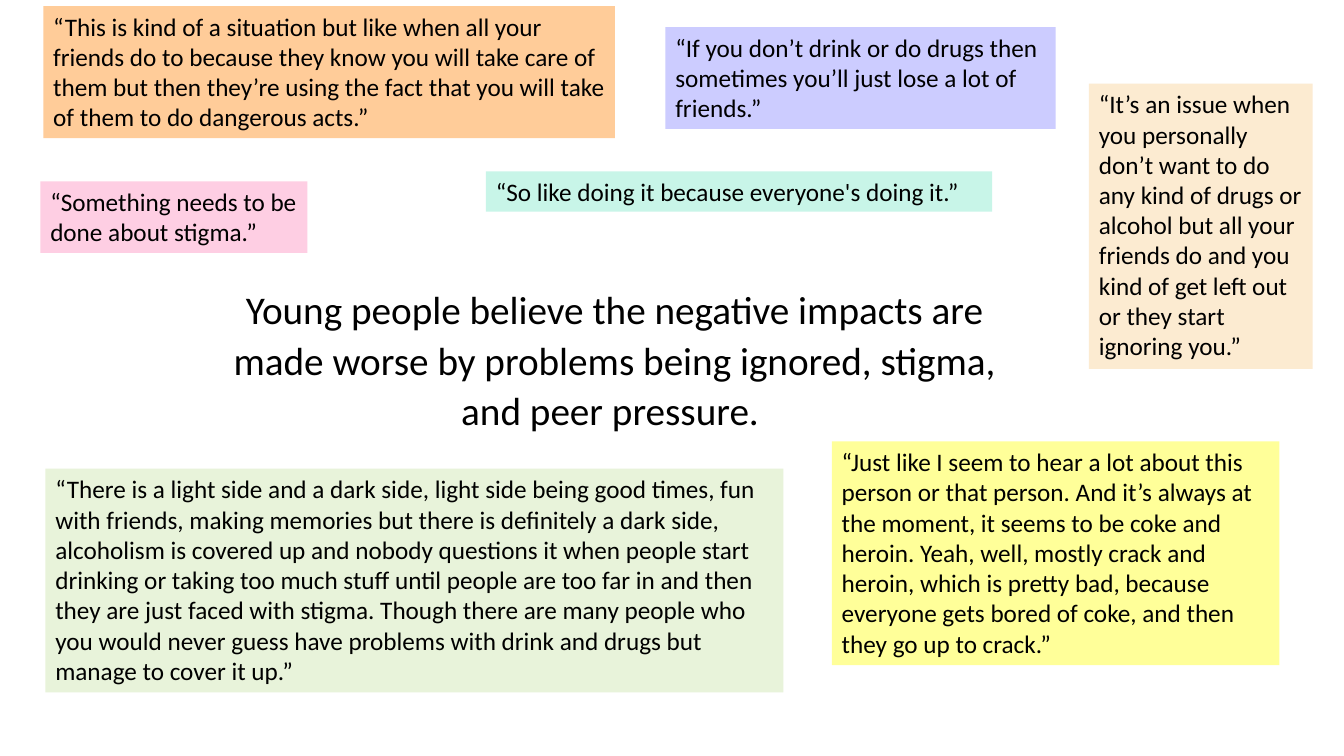
import pptx
import pptx.dml.color
import pptx.enum.text
import pptx.util

Inches = pptx.util.Inches
Pt = pptx.util.Pt
RGBColor = pptx.dml.color.RGBColor

COLOURS = {
    "text": "000000",
    "white": "FFFFFF",
    "pink": "FECEE3",
    "lilac": "CCCCFF",
    "orange": "FFCC99",
    "cream": "FCEBD1",
    "mint": "C8F5E8",
    "yellow": "FFFF99",
    "green": "E8F3DA",
}

QUOTES = [
    ("pink", 0.4, 1.8, 2.65, 0.71, "“Something needs to be done about stigma.”"),
    ("lilac", 6.6, 0.27, 3.87, 1.01,
     "“If you don’t drink or do drugs then sometimes you’ll just lose a lot of friends.”"),
    ("orange", 0.43, 0.06, 5.67, 1.31,
     "“This is kind of a situation but like when all your friends do to because they know "
     "you will take care of them but then they’re using the fact that you will take of them "
     "to do dangerous acts.”"),
    ("cream", 10.8, 0.83, 2.22, 2.83,
     "“It’s an issue when you personally don’t want to do any kind of drugs or alcohol but "
     "all your friends do and you kind of get left out or they start ignoring you.”"),
    ("mint", 4.82, 1.7, 5.02, 0.4, "“So like doing it because everyone's doing it.”"),
    ("yellow", 8.25, 4.38, 4.44, 2.22,
     "“Just like I seem to hear a lot about this person or that person. And it’s always at "
     "the moment, it seems to be coke and heroin. Yeah, well, mostly crack and heroin, which "
     "is pretty bad, because everyone gets bored of coke, and then they go up to crack.”"),
    ("green", 0.45, 4.65, 7.32, 2.22,
     "“There is a light side and a dark side, light side being good times, fun with friends, "
     "making memories but there is definitely a dark side, alcoholism is covered up and "
     "nobody questions it when people start drinking or taking too much stuff until people "
     "are too far in and then they are just faced with stigma. Though there are many people "
     "who you would never guess have problems with drink and drugs but manage to cover it up.”"),
]

deck = pptx.Presentation()
deck.slide_width = Inches(13.33)
deck.slide_height = Inches(7.5)
page = deck.slides.add_slide(deck.slide_layouts[6])


def add_text_panel(fill, left, top, width, height, text, size=18):
    box = page.shapes.add_textbox(Inches(left), Inches(top), Inches(width), Inches(height))
    box.fill.solid()
    box.fill.fore_color.rgb = RGBColor.from_string(COLOURS[fill])
    box.text_frame.word_wrap = True
    box.text_frame.auto_size = pptx.enum.text.MSO_AUTO_SIZE.SHAPE_TO_FIT_TEXT
    para = box.text_frame.paragraphs[0]
    span = para.add_run()
    span.text = text
    span.font.name = "Calibri"
    span.font.size = Pt(size)
    span.font.color.rgb = RGBColor.from_string(COLOURS["text"])
    return para


for quote in QUOTES:
    add_text_panel(*quote)

message = add_text_panel(
    "white", 2.01, 2.75, 8.17, 1.59,
    "Young people believe the negative impacts are made worse by problems being ignored, "
    "stigma, and peer pressure. ",
    size=28,
)
message.alignment = pptx.enum.text.PP_ALIGN.CENTER
message.line_spacing = 1.07

deck.save("out.pptx")
